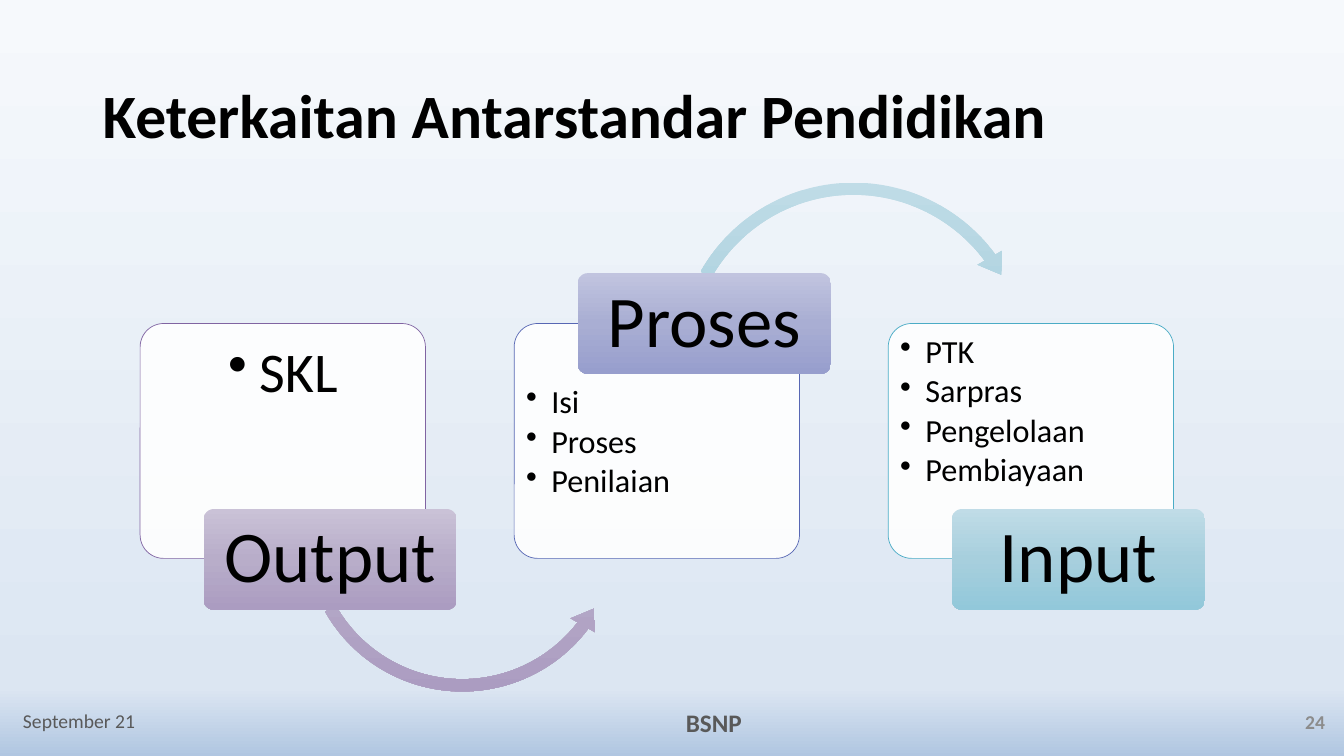
from dataclasses import dataclass

from lxml.etree import SubElement
from pptx import Presentation
from pptx.dml.color import RGBColor
from pptx.enum.shapes import MSO_SHAPE as Preset
from pptx.enum.text import MSO_ANCHOR as Anchor, PP_ALIGN as Align
from pptx.oxml.ns import qn
from pptx.util import Inches, Pt

FONT = "Calibri"
CARD_LEFT, CARD_TOP, CARD_PITCH = 1.39, 3.21, 3.71
CARD_WIDTH, CARD_HEIGHT = 2.83, 2.33
TAG_SHIFT, TAG_WIDTH, TAG_HEIGHT = 0.63, 2.51, 1
TAG_HIGH, TAG_LOW = 2.71, 5.05


@dataclass
class Arrow:
    preset: Preset
    left: float
    top: float
    size: float
    thickness: float  # percent of the size
    head: float  # percent of the size
    swing: float  # degrees, as are the two ends
    end: float
    start: float
    stops: dict[int, str]


@dataclass
class Stage:
    label: str
    items: list[str]
    outline: str
    stops: dict[int, str]
    tag_top: float
    size: float = 23
    align: Align = Align.LEFT
    hang: float = 0.25
    inset: float = 0.05
    top_inset: float = 0.05
    arrow: Arrow | None = None


@dataclass
class Caption:
    text: str
    left: float
    top: float
    width: float
    height: float
    size: float
    color: str
    bold: bool = True
    align: Align = Align.LEFT
    line_spacing: float = 1.0


def rgb(color: str) -> RGBColor:
    return RGBColor.from_string(color)


def fill_gradient(fill, stops: dict[int, str]) -> None:
    """Fill from top to bottom with colours keyed by percent."""
    fill.gradient()
    fill.gradient_angle = 270
    stop_list = fill.gradient_stops[0]._gs.getparent()
    for old in list(stop_list):
        stop_list.remove(old)
    for percent, color in stops.items():
        stop = SubElement(stop_list, qn("a:gs"), pos=str(percent * 1000))
        SubElement(stop, qn("a:srgbClr"), val=color)


def set_insets(frame, side: float, top: float, bottom: float) -> None:
    frame.margin_left = frame.margin_right = Inches(side)
    frame.margin_top, frame.margin_bottom = Inches(top), Inches(bottom)


def style(paragraph, size: float, color: str = "000000", bold: bool = False,
          align: Align = Align.LEFT, spacing: float = 0.9, after: float = 0) -> None:
    paragraph.alignment = align
    paragraph.line_spacing = spacing
    paragraph.space_after = Pt(size * after)
    font = paragraph.font
    font.name, font.size, font.bold = FONT, Pt(size), bold
    font.color.rgb = rgb(color)


def add_bullet(paragraph, hang: float) -> None:
    props = paragraph._p.get_or_add_pPr()
    props.set("marL", str(Inches(hang)))
    props.set("indent", str(-Inches(hang)))
    SubElement(props, qn("a:buChar"), char="•")


def add_round_box(slide, left: float, top: float, width: float, height: float):
    box = slide.shapes.add_shape(Preset.ROUNDED_RECTANGLE, Inches(left), Inches(top),
                                 Inches(width), Inches(height))
    box.adjustments[0] = 0.1
    box.shadow.inherit = False
    box.text_frame.word_wrap = True
    return box


def add_card(slide, stage: Stage, left: float) -> None:
    card = add_round_box(slide, left, CARD_TOP, CARD_WIDTH, CARD_HEIGHT)
    card.fill.solid()
    card.fill.fore_color.rgb = rgb("FFFFFF")
    white = card._element.spPr.find(qn("a:solidFill"))[0]
    SubElement(white, qn("a:alpha"), val="90000")
    card.line.color.rgb = rgb(stage.outline)
    card.line.width = Pt(0.5)
    frame = card.text_frame
    frame.vertical_anchor = Anchor.TOP
    set_insets(frame, stage.inset, stage.top_inset, stage.inset)
    for index, item in enumerate(stage.items):
        paragraph = frame.add_paragraph() if index else frame.paragraphs[0]
        paragraph.text = item
        paragraph.level = 1
        add_bullet(paragraph, stage.hang)
        style(paragraph, stage.size, align=stage.align, after=0.15)


def add_arrow(slide, arrow: Arrow) -> None:
    curve = slide.shapes.add_shape(arrow.preset, Inches(arrow.left), Inches(arrow.top),
                                   Inches(arrow.size), Inches(arrow.size))
    degree = 0.6  # adjustment units per degree
    values = (arrow.thickness / 100, arrow.swing * degree, arrow.end * degree,
              arrow.start * degree, arrow.head / 100)
    for index, value in enumerate(values):
        curve.adjustments[index] = value
    curve.shadow.inherit = False
    fill_gradient(curve.fill, arrow.stops)
    curve.line.fill.background()


def add_tag(slide, stage: Stage, left: float) -> None:
    tag = add_round_box(slide, left, stage.tag_top, TAG_WIDTH, TAG_HEIGHT)
    fill_gradient(tag.fill, stage.stops)
    tag.line.fill.background()
    frame = tag.text_frame
    frame.vertical_anchor = Anchor.MIDDLE
    set_insets(frame, 0.11, 0.07, 0.07)
    frame.text = stage.label
    style(frame.paragraphs[0], 52, align=Align.CENTER, after=0.35)


def add_caption(slide, caption: Caption) -> None:
    box = slide.shapes.add_textbox(Inches(caption.left), Inches(caption.top),
                                   Inches(caption.width), Inches(caption.height))
    frame = box.text_frame
    frame.word_wrap = True
    frame.vertical_anchor = Anchor.MIDDLE
    frame.text = caption.text
    style(frame.paragraphs[0], caption.size, caption.color, caption.bold,
          caption.align, caption.line_spacing)


PURPLE = {0: "CAC2D7", 50: "B8ADC9", 100: "AB9CC1"}
INDIGO = {0: "C1C4DF", 50: "A9AED3", 100: "979ECD"}
TEAL = {0: "C0DCE7", 50: "A7CFDD", 100: "92C8DA"}

STAGES = [
    Stage("Output", ["SKL"], "8064A2", PURPLE, TAG_LOW, size=40, align=Align.CENTER,
          hang=0.31, inset=0.14, top_inset=0.14,
          arrow=Arrow(Preset.LEFT_CIRCULAR_ARROW, 2.94, 3.65, 3.29, thickness=3.7,
                      head=4.3, swing=7.62, end=37.21, start=150.41, stops=PURPLE)),
    Stage("Proses", ["Isi", "Proses", "Penilaian"], "5767B4", INDIGO, TAG_HIGH,
          top_inset=0.55,
          arrow=Arrow(Preset.CIRCULAR_ARROW, 6.64, 1.73, 3.65, thickness=3.3,
                      head=3.9, swing=6.81, end=323.6, start=209.59, stops=TEAL)),
    Stage("Input", ["PTK", "Sarpras", "Pengelolaan", "Pembiayaan"], "4BACC6", TEAL,
          TAG_LOW),
]

TITLE = Caption("Keterkaitan Antarstandar Pendidikan", 0.92, 0.45, 11.51, 1.45, 44,
                "000000", line_spacing=0.9)
FOOTER = [
    Caption("September 21", 0.13, 6.95, 3, 0.4, 14, "595959", bold=False),
    Caption("BSNP", 4.83, 6.97, 4.5, 0.4, 18, "595959", align=Align.CENTER),
    Caption("24", 10.24, 6.96, 3, 0.4, 14, "8C8C8C", align=Align.RIGHT),
]


def main() -> None:
    deck = Presentation()
    deck.slide_width, deck.slide_height = Inches(13.33), Inches(7.5)
    slide = deck.slides.add_slide(deck.slide_layouts[6])
    fill_gradient(slide.background.fill, {0: "F6F9FC", 91: "DCE6F2", 100: "B0C6E1"})

    add_caption(slide, TITLE)
    # Stages: card, arrow to the next stage, tag on top
    for index, stage in enumerate(STAGES):
        left = CARD_LEFT + index * CARD_PITCH
        add_card(slide, stage, left)
        if stage.arrow:
            add_arrow(slide, stage.arrow)
        add_tag(slide, stage, left + TAG_SHIFT)
    # Footer
    for caption in FOOTER:
        add_caption(slide, caption)
    deck.save("out.pptx")


if __name__ == "__main__":
    main()
